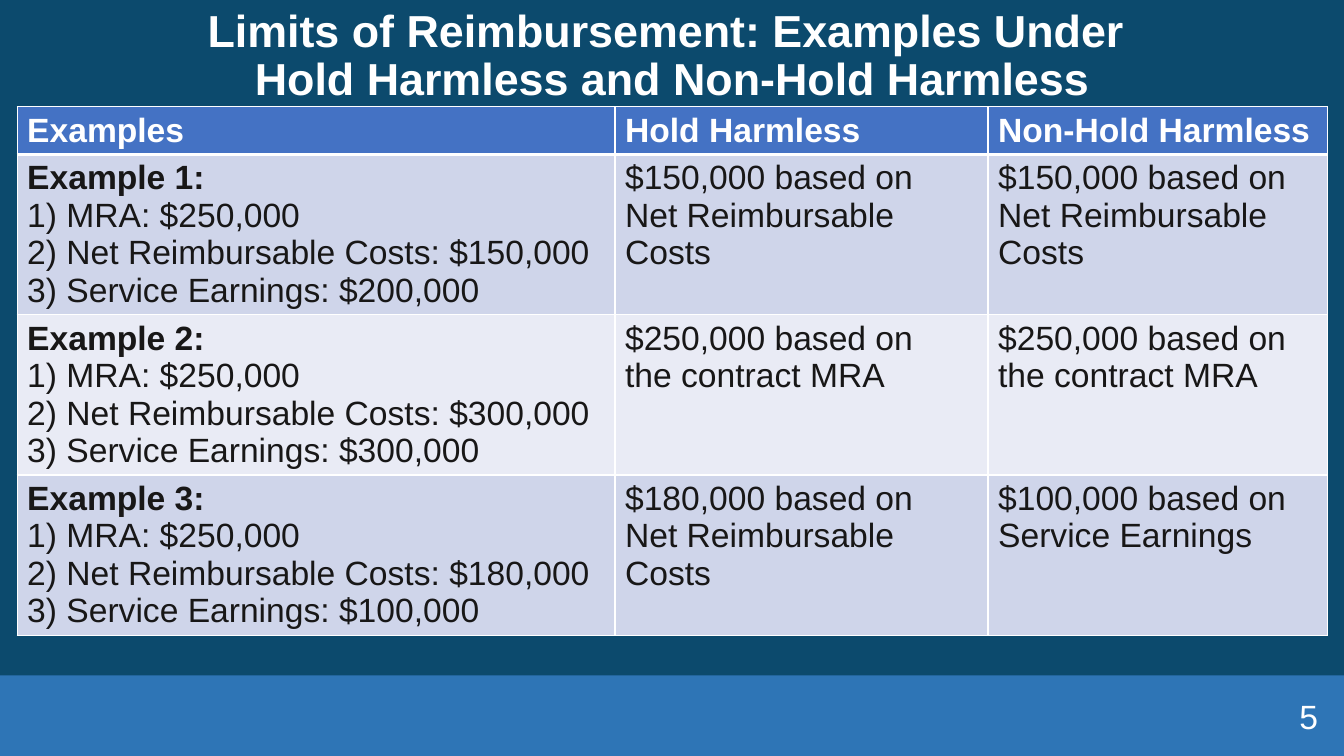
"""Build the slide comparing reimbursement limits under two contract types."""
from dataclasses import dataclass

from lxml import etree
from pptx import Presentation
from pptx import util as u
from pptx.dml.color import RGBColor
from pptx.enum import shapes, text
from pptx.oxml.ns import qn


@dataclass(frozen=True)
class Theme:
    font: str = "Arial"
    title_size: int = 32
    body_size: int = 24
    background: str = "0C4A6D"
    footer: str = "2E75B6"
    header: str = "4472C4"
    bands: tuple = ("CFD5EA", "E9EBF5")
    light: str = "FFFFFF"
    dark: str = "181717"
    border: int = 1
    header_border: int = 3


class SlideBuilder:
    def __init__(self, deck, theme):
        self.theme = theme
        self.page = deck.slides.add_slide(deck.slide_layouts[5])
        self.paint(self.page.background.fill, theme.background)

    def paint(self, fill, color):
        fill.solid()
        fill.fore_color.rgb = RGBColor.from_string(color)

    def place(self, box, left, top, width, height):
        box.left, box.top = u.Inches(left), u.Inches(top)
        box.width, box.height = u.Inches(width), u.Inches(height)

    def add_span(self, para, words, size, color, bold=False):
        span = para.add_run()
        span.text = words
        span.font.name = self.theme.font
        span.font.size = u.Pt(size)
        span.font.bold = bold
        span.font.color.rgb = RGBColor.from_string(color)

    def title(self, lines, *area):
        box = self.page.shapes.title
        self.place(box, *area)
        frame = box.text_frame
        frame.auto_size = text.MSO_AUTO_SIZE.NONE
        frame.vertical_anchor = text.MSO_ANCHOR.MIDDLE
        para = frame.paragraphs[0]
        para.alignment = text.PP_ALIGN.CENTER
        para.line_spacing = 0.9
        for index, line in enumerate(lines):
            if index:
                para.add_line_break()
            self.add_span(para, line, self.theme.title_size, self.theme.light, True)

    def footer_bar(self, *area):
        bar = self.page.shapes.add_shape(
            shapes.MSO_SHAPE.RECTANGLE, *map(u.Inches, area))
        bar.shadow.inherit = False
        self.paint(bar.fill, self.theme.footer)
        bar.line.fill.background()

    def page_number(self, number, *area):
        box = self.page.shapes.add_textbox(*map(u.Inches, area))
        frame = box.text_frame
        frame.word_wrap = True
        frame.vertical_anchor = text.MSO_ANCHOR.MIDDLE
        para = frame.paragraphs[0]
        para.alignment = text.PP_ALIGN.RIGHT
        self.add_span(para, number, self.theme.body_size, self.theme.light)

    def borders(self, cell, top, bottom):
        properties = cell._tc.get_or_add_tcPr()
        thin = self.theme.border
        for side, points in zip("LRTB", (thin, thin, top, bottom)):
            line = etree.SubElement(
                properties, qn(f"a:ln{side}"), w=str(u.Pt(points)))
            fill = etree.SubElement(line, qn("a:solidFill"))
            etree.SubElement(fill, qn("a:srgbClr"), val=self.theme.light)

    def cell(self, cell, lines, fill, color, bold_lines, top, bottom):
        self.borders(cell, top, bottom)
        self.paint(cell.fill, fill)
        frame = cell.text_frame
        for index, line in enumerate(lines):
            para = frame.add_paragraph() if index else frame.paragraphs[0]
            self.add_span(para, line, self.theme.body_size, color,
                          index < bold_lines)

    def table(self, rows, left, top, widths, header_height, row_height):
        theme = self.theme
        heights = [header_height] + [row_height] * (len(rows) - 1)
        area = (left, top, sum(widths), sum(heights))
        grid = self.page.shapes.add_table(
            len(rows), len(widths), *map(u.Inches, area)).table
        for column, width in zip(grid.columns, widths):
            column.width = u.Inches(width)
        for r, (row, height) in enumerate(zip(rows, heights)):
            grid.rows[r].height = u.Inches(height)
            fill = theme.bands[(r - 1) % 2] if r else theme.header
            color = theme.dark if r else theme.light
            upper = theme.header_border if r == 1 else theme.border
            lower = theme.border if r else theme.header_border
            for c, lines in enumerate(row):
                bold_lines = 1 if r == 0 or c == 0 else 0
                self.cell(grid.cell(r, c), lines, fill, color,
                          bold_lines, upper, lower)


def example(number, costs, earnings, *results):
    facts = [
        f"Example {number}:",
        "1) MRA: $250,000",
        f"2) Net Reimbursable Costs: {costs}",
        f"3) Service Earnings: {earnings}",
    ]
    return [facts] + [[f"{amount} based on", basis] for amount, basis in results]


def main():
    deck = Presentation()
    deck.slide_width, deck.slide_height = u.Inches(13.33), u.Inches(7.5)
    slide = SlideBuilder(deck, Theme())

    net_costs, mra = "Net Reimbursable Costs", "the contract MRA"
    rows = [
        [["Examples"], ["Hold Harmless"], ["Non-Hold Harmless"]],
        example(1, "$150,000", "$200,000",
                ("$150,000", net_costs), ("$150,000", net_costs)),
        example(2, "$300,000", "$300,000",
                ("$250,000", mra), ("$250,000", mra)),
        example(3, "$180,000", "$100,000",
                ("$180,000", net_costs), ("$100,000", "Service Earnings")),
    ]

    slide.footer_bar(0, 6.7, 13.33, 0.8)
    slide.title(["Limits of Reimbursement: Examples Under ",
                 "Hold Harmless and Non-Hold Harmless"], 0.17, -0.16, 13, 1.45)
    slide.table(rows, 0.17, 1.06, (5.93, 3.7, 3.37), 0.47, 1.59)
    slide.page_number("5", 10.17, 6.9, 3, 0.4)
    deck.save("out.pptx")


if __name__ == "__main__":
    main()
